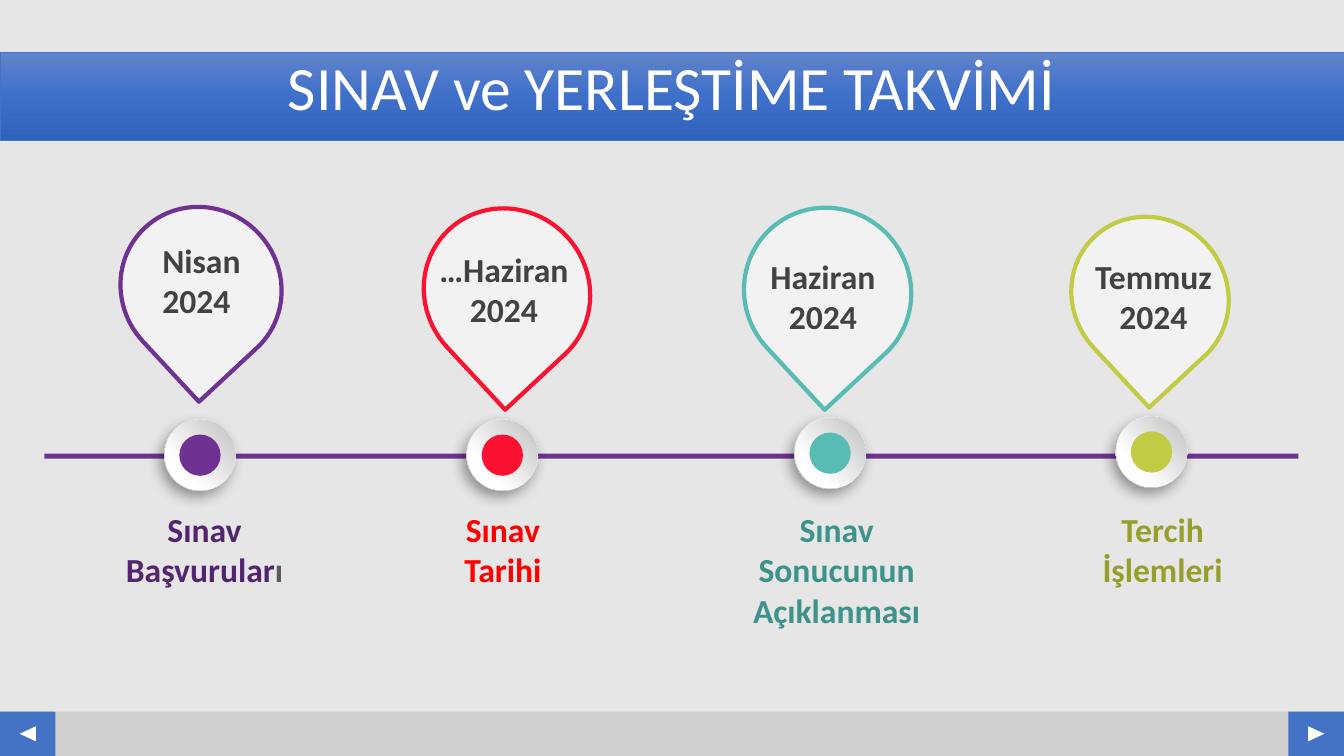
import copy
from dataclasses import dataclass
from typing import Any

import lxml.etree
import pptx
import pptx.dml.color
import pptx.enum.shapes
import pptx.enum.text
import pptx.oxml.ns
import pptx.util

Cm = pptx.util.Cm
Pt = pptx.util.Pt
SHAPE = pptx.enum.shapes.MSO_SHAPE
ALIGN = pptx.enum.text.PP_ALIGN
ANCHOR = pptx.enum.text.MSO_ANCHOR
qn = pptx.oxml.ns.qn

COLORS = {
    "background": "E7E6E6",
    "footer": "D0CECE",
    "blue": "4472C4",
    "white": "FFFFFF",
    "pin": "F2F2F2",
    "date": "424242",
    "gray": "595959",
    "purple": "6F3293",
    "dark_purple": "53256E",
    "red": "FA1230",
    "pure_red": "FF0000",
    "teal": "58BBB4",
    "dark_teal": "3C938C",
    "lime": "C2CB44",
    "dark_lime": "979F2C",
    "shadow": "000000",
}
TITLE_STOPS = [(0, "6183CB"), (0.5, "3E70CA"), (1, "3062BB")]
OUTER_STOPS = [(0.17, "FFFFFF"), (0.88, "B8B8B8")]
INNER_STOPS = [(0.29, "FFFFFF"), (0.98, "BFBFBF")]
BODY_FONT = {"name": "Calibri", "size": Pt(24), "bold": True}
TITLE_FONT = {"name": "Calibri", "size": Pt(44), "bold": False}
SLIDE_WIDTH, SLIDE_HEIGHT = 33.87, 19.05
FOOTER_TOP, FOOTER_HEIGHT, BUTTON_WIDTH = 17.93, 1.12, 1.4
ARROW_WIDTH, ARROW_HEIGHT = 0.38, 0.41
LABEL_TOP = 12.7


@dataclass
class Box:
    left: float
    top: float
    width: float
    height: float

    def lengths(self) -> list[int]:
        return [Cm(value) for value in (self.left, self.top, self.width, self.height)]


@dataclass
class Milestone:
    color: str
    pin: Box
    date_box: Box
    date_lines: list[str]
    date_alignment: Any
    center: tuple[float, float]
    label_box: Box
    label_runs: list[tuple[str, str]]


MILESTONES = [
    Milestone("purple", Box(3.07, 5.18, 3.99, 4.14), Box(3.84, 5.92, 2.69, 2.31),
              ["Nisan", "2024"], ALIGN.LEFT, (5.04, 11.47),
              Box(2.74, LABEL_TOP, 4.83, 2.31),
              [("Sınav Başvurular", "dark_purple"), ("ı", "gray")]),
    Milestone("red", Box(10.72, 5.21, 4.11, 4.29), Box(10.77, 6.15, 3.86, 2.31),
              ["…Haziran", "2024"], ALIGN.CENTER, (12.66, 11.47),
              Box(10.54, LABEL_TOP, 4.27, 2.31), [("Sınav Tarihi", "pure_red")]),
    Milestone("teal", Box(18.77, 5.21, 4.17, 4.27), Box(18.95, 6.32, 3.58, 2.31),
              ["Haziran", "2024"], ALIGN.CENTER, (20.92, 11.42),
              Box(18.34, LABEL_TOP, 5.49, 3.33),
              [("Sınav Sonucunun Açıklanması", "dark_teal")]),
    Milestone("lime", Box(27.05, 5.41, 3.86, 4.09), Box(27.33, 6.32, 3.48, 2.31),
              ["Temmuz", "2024"], ALIGN.CENTER, (29.02, 11.39),
              Box(27.33, LABEL_TOP, 3.94, 2.31), [("Tercih İşlemleri", "dark_lime")]),
]


def rgb(value: str) -> pptx.dml.color.RGBColor:
    return pptx.dml.color.RGBColor.from_string(value)


def add_shape(slide: Any, kind: Any, box: Box, color: str, rotation: float = 0) -> Any:
    shape = slide.shapes.add_shape(kind, *box.lengths())
    shape.shadow.inherit = False
    shape.rotation = rotation
    shape.fill.solid()
    shape.fill.fore_color.rgb = rgb(COLORS[color])
    shape.line.fill.background()
    return shape


def set_gradient(shape: Any, stops: list[tuple[float, str]], angle: float) -> None:
    shape.fill.gradient()
    shape.fill.gradient_angle = angle
    stop_list = shape._element.spPr.find(qn("a:gradFill")).find(qn("a:gsLst"))
    for _ in stops[2:]:
        stop_list.append(copy.deepcopy(stop_list[0]))
    for stop, (position, color) in zip(shape.fill.gradient_stops, stops):
        stop.position = position
        stop.color.rgb = rgb(color)


def set_shadow(shape: Any) -> None:
    effects = shape._element.spPr.find(qn("a:effectLst"))
    shadow = lxml.etree.SubElement(effects, qn("a:outerShdw"), {
        "blurRad": str(Pt(10)), "dist": str(Pt(5)), "dir": str(123 * 60000),
        "algn": "ctr", "rotWithShape": "0"})
    color = lxml.etree.SubElement(shadow, qn("a:srgbClr"), val=COLORS["shadow"])
    lxml.etree.SubElement(color, qn("a:alpha"), val="39000")


def add_run(paragraph: Any, text: str, color: str, font_format: dict[str, Any]) -> None:
    run = paragraph.add_run()
    run.text = text
    run.font.color.rgb = rgb(COLORS[color])
    for name, value in font_format.items():
        setattr(run.font, name, value)


def add_text(slide: Any, box: Box, paragraphs: list[list[tuple[str, str]]],
             alignment: Any, wrap: bool) -> None:
    frame = slide.shapes.add_textbox(*box.lengths()).text_frame
    frame.word_wrap = wrap
    for index, runs in enumerate(paragraphs):
        paragraph = frame.add_paragraph() if index else frame.paragraphs[0]
        paragraph.alignment = alignment
        for text, color in runs:
            add_run(paragraph, text, color, BODY_FONT)


def format_title(slide: Any) -> None:
    title = slide.shapes.title
    title.left, title.top, title.width, title.height = Box(0, 1.32, SLIDE_WIDTH, 2.21).lengths()
    set_gradient(title, TITLE_STOPS, 270)
    title.line.color.rgb = rgb(COLORS["blue"])
    title.line.width = Pt(0.5)
    frame_format = {"auto_size": pptx.enum.text.MSO_AUTO_SIZE.NONE,
                    "vertical_anchor": ANCHOR.TOP, "word_wrap": True}
    for name, value in frame_format.items():
        setattr(title.text_frame, name, value)
    paragraph = title.text_frame.paragraphs[0]
    paragraph.alignment = ALIGN.CENTER
    paragraph.line_spacing = 0.9
    add_run(paragraph, "SINAV ve YERLEŞTİME TAKVİMİ", "white", TITLE_FONT)


def add_footer(slide: Any) -> None:
    add_shape(slide, SHAPE.RECTANGLE,
              Box(0, FOOTER_TOP, SLIDE_WIDTH, FOOTER_HEIGHT), "footer")
    for left, rotation in ((0, 270), (SLIDE_WIDTH - BUTTON_WIDTH, 90)):
        add_shape(slide, SHAPE.RECTANGLE,
                  Box(left, FOOTER_TOP, BUTTON_WIDTH, FOOTER_HEIGHT), "blue")
        arrow = Box(left + (BUTTON_WIDTH - ARROW_WIDTH) / 2,
                    FOOTER_TOP + (FOOTER_HEIGHT - ARROW_HEIGHT) / 2,
                    ARROW_WIDTH, ARROW_HEIGHT)
        add_shape(slide, SHAPE.ISOSCELES_TRIANGLE, arrow, "white", rotation)


def add_disc(slide: Any, center: tuple[float, float], size: float, color: str,
             rotation: float = 0) -> Any:
    box = Box(center[0] - size / 2, center[1] - size / 2, size, size)
    return add_shape(slide, SHAPE.OVAL, box, color, rotation)


def add_milestone(slide: Any, milestone: Milestone) -> None:
    outer = add_disc(slide, milestone.center, 1.8, "white", 62.3)
    set_gradient(outer, OUTER_STOPS, 315)
    set_shadow(outer)
    inner = add_disc(slide, milestone.center, 1.78, "white", 273)
    set_gradient(inner, INNER_STOPS, 315)
    add_disc(slide, milestone.center, 1.04, milestone.color)
    pin = add_shape(slide, SHAPE.TEAR, milestone.pin, "pin", 137.1)
    pin.line.color.rgb = rgb(COLORS[milestone.color])
    pin.line.width = Pt(3)
    date_paragraphs = [[(line, "date")] for line in milestone.date_lines]
    add_text(slide, milestone.date_box, date_paragraphs, milestone.date_alignment, False)
    add_text(slide, milestone.label_box, [milestone.label_runs], ALIGN.CENTER, True)


def main() -> None:
    presentation = pptx.Presentation()
    presentation.slide_width = Cm(SLIDE_WIDTH)
    presentation.slide_height = Cm(SLIDE_HEIGHT)
    slide = presentation.slides.add_slide(presentation.slide_layouts[5])
    slide.background.fill.solid()
    slide.background.fill.fore_color.rgb = rgb(COLORS["background"])
    format_title(slide)
    add_footer(slide)
    add_shape(slide, SHAPE.RECTANGLE, Box(1.12, 11.43, 31.6, 0.13), "purple")
    for milestone in MILESTONES:
        add_milestone(slide, milestone)
    presentation.save("out.pptx")


if __name__ == "__main__":
    main()
